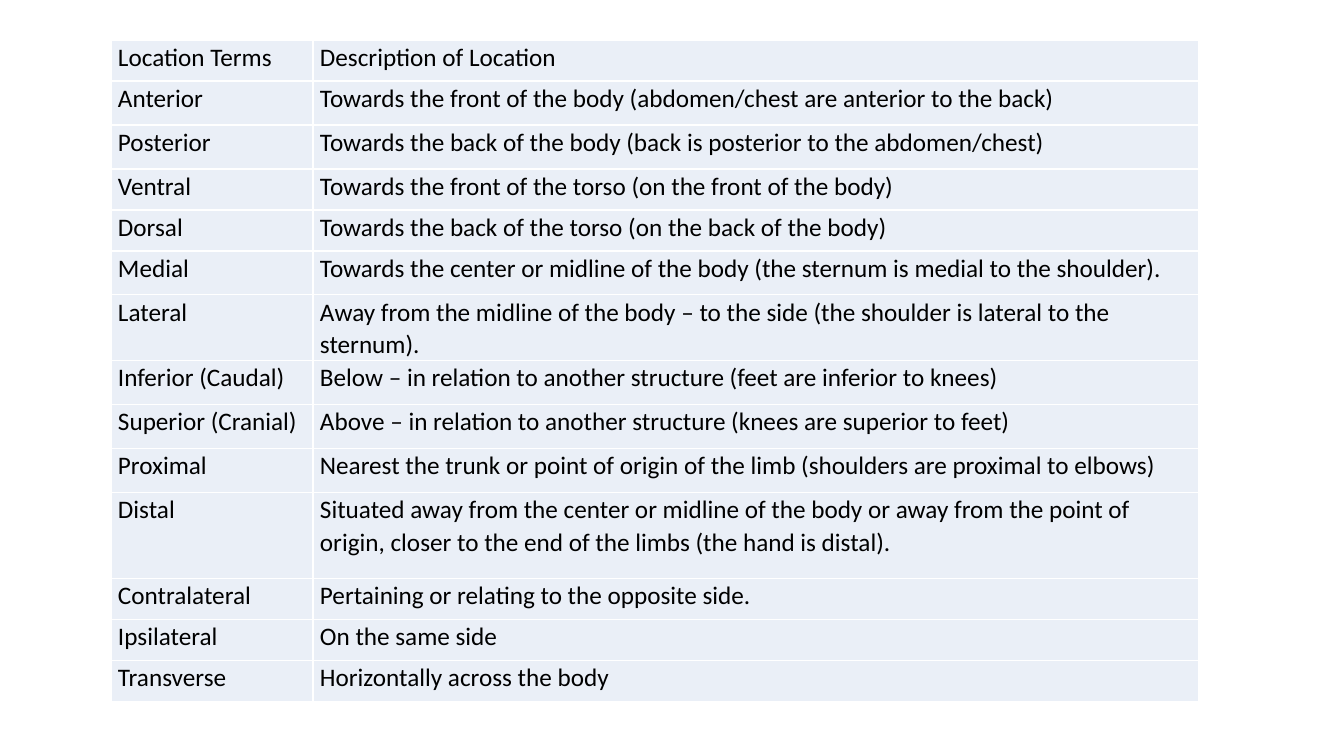
from lxml.etree import SubElement as Sub
from pptx import Presentation
from pptx.dml.color import RGBColor
from pptx.oxml.ns import qn
from pptx.util import Pt

PX = 914400 / 100.8
BLACK = RGBColor(0, 0, 0)
WHITE = RGBColor(255, 255, 255)
PALE = RGBColor(0xEA, 0xEF, 0xF7)
TERMS = [
    ("Location Terms", "Description of Location", 41),
    ("Anterior", "Towards the front of the body (abdomen/chest are anterior to the back)", 44),
    ("Posterior", "Towards the back of the body (back is posterior to the abdomen/chest)", 44),
    ("Ventral", "Towards the front of the torso (on the front of the body)", 41),
    ("Dorsal", "Towards the back of the torso (on the back of the body)", 41),
    ("Medial", "Towards the center or midline of the body (the sternum is medial to the shoulder).", 44),
    ("Lateral", "Away from the midline of the body – to the side (the shoulder is lateral to the sternum).", 44),
    ("Inferior (Caudal)", "Below – in relation to another structure (feet are inferior to knees)", 44),
    ("Superior (Cranial)", "Above – in relation to another structure (knees are superior to feet)", 44),
    ("Proximal", "Nearest the trunk or point of origin of the limb (shoulders are proximal to elbows)", 44),
    ("Distal", "Situated away from the center or midline of the body or away from the point of origin, "
               "closer to the end of the limbs (the hand is distal).", 86),
    ("Contralateral", "Pertaining or relating to the opposite side.", 41),
    ("Ipsilateral", "On the same side", 41),
    ("Transverse", "Horizontally across the body", 41),
]


def px(n):
    return round(n * PX)


def write(cell, text, size=18, font="Calibri", color=BLACK, fill=PALE, edge=WHITE):
    cell.margin_left = cell.margin_right = px(7)
    cell.margin_top = cell.margin_bottom = 0
    para = cell.text_frame.paragraphs[0]
    para.line_spacing = 1.07
    run = para.add_run()
    run.text = text
    run.font.size = Pt(size)
    run.font.name = font
    run.font.color.rgb = color
    props = cell._tc.get_or_add_tcPr()
    for side in ("lnL", "lnR", "lnT", "lnB"):
        line = Sub(props, qn("a:" + side), w=str(Pt(1)))
        Sub(Sub(line, qn("a:solidFill")), qn("a:srgbClr"), val=str(edge))
    cell.fill.solid()
    cell.fill.fore_color.rgb = fill


deck = Presentation()
deck.slide_width = px(1344)
deck.slide_height = px(756)
slide = deck.slides.add_slide(deck.slide_layouts[6])

frame = slide.shapes.add_table(len(TERMS), 2, px(111), px(40), px(1088), px(662))
table = frame.table
table.first_row = False
table.horz_banding = False
for col, wide in zip(table.columns, (202, 886)):
    col.width = px(wide)
for row, (term, about, high) in zip(table.rows, TERMS):
    row.height = px(high)
    for cell, text in zip(row.cells, (term, about)):
        write(cell, text)
frame.height = px(662)

deck.save("out.pptx")
